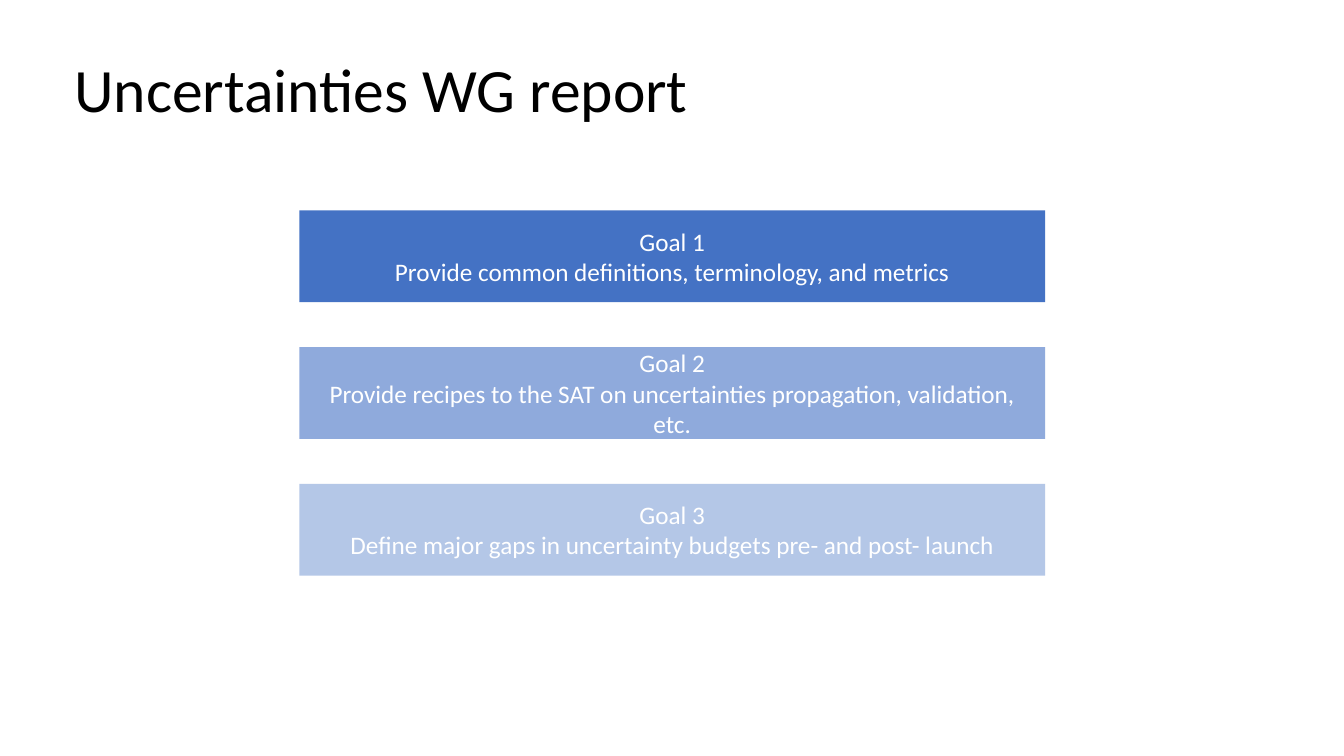
from dataclasses import dataclass

from pptx import Presentation
from pptx import util as u
from pptx.dml.color import RGBColor
from pptx.enum import shapes, text
from pptx.slide import Slide
from pptx.text.text import TextFrame

BLACK = RGBColor(0x00, 0x00, 0x00)
WHITE = RGBColor(0xFF, 0xFF, 0xFF)
BLUE = RGBColor(0x44, 0x72, 0xC4)
MID_BLUE = RGBColor(0x8F, 0xAA, 0xDC)
PALE_BLUE = RGBColor(0xB4, 0xC7, 0xE7)

FONT = "Calibri"
GOAL_LEFT, GOAL_TOP = 213.8, 150.2
GOAL_WIDTH, GOAL_HEIGHT = 532.8, 65.6
GOAL_PITCH = 97.7


@dataclass(frozen=True)
class Goal:
    heading: str
    description: str
    fill: RGBColor


GOALS = [
    Goal("Goal 1", "Provide common definitions, terminology, and metrics", BLUE),
    Goal("Goal 2", "Provide recipes to the SAT on uncertainties propagation, validation, etc.", MID_BLUE),
    Goal("Goal 3", "Define major gaps in uncertainty budgets pre- and post- launch", PALE_BLUE),
]


def set_text(frame: TextFrame, content: str, size: float, color: RGBColor,
             alignment: text.PP_ALIGN, line_spacing: float = 1.0) -> None:
    """Fill the frame, one paragraph per line, centred vertically."""
    frame.text = content
    frame.word_wrap = True
    frame.vertical_anchor = text.MSO_ANCHOR.MIDDLE
    for paragraph in frame.paragraphs:
        paragraph.alignment = alignment
        paragraph.line_spacing = line_spacing
        for run in paragraph.runs:
            run.font.name = FONT
            run.font.size = u.Pt(size)
            run.font.color.rgb = color


def add_title(slide: Slide, title: str) -> None:
    shape = slide.shapes.add_textbox(u.Pt(46.1), u.Pt(13.7), u.Pt(828), u.Pt(104.4))
    set_text(shape.text_frame, title, 44, BLACK, text.PP_ALIGN.LEFT, 0.9)


def add_goal(slide: Slide, goal: Goal, top: float) -> None:
    shape = slide.shapes.add_shape(
        shapes.MSO_SHAPE.RECTANGLE,
        u.Pt(GOAL_LEFT), u.Pt(top), u.Pt(GOAL_WIDTH), u.Pt(GOAL_HEIGHT))
    shape.shadow.inherit = False
    shape.fill.solid()
    shape.fill.fore_color.rgb = goal.fill
    shape.line.fill.background()
    set_text(shape.text_frame, f"{goal.heading}\n{goal.description}", 18, WHITE,
             text.PP_ALIGN.CENTER)


def main() -> None:
    presentation = Presentation()
    presentation.slide_width = u.Pt(960)
    presentation.slide_height = u.Pt(540)
    slide = presentation.slides.add_slide(presentation.slide_layouts[6])
    add_title(slide, "Uncertainties WG report")
    for index, goal in enumerate(GOALS):
        add_goal(slide, goal, GOAL_TOP + index * GOAL_PITCH)
    presentation.save("out.pptx")


if __name__ == "__main__":
    main()
